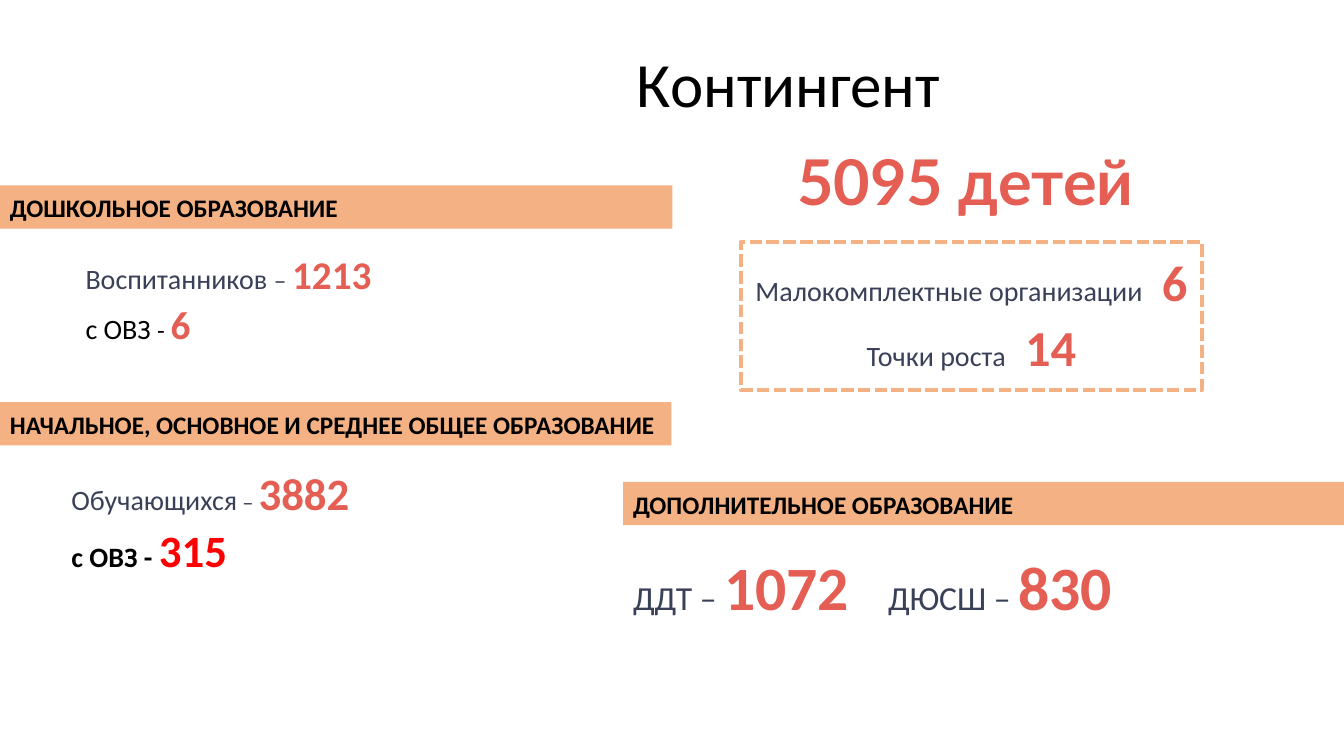
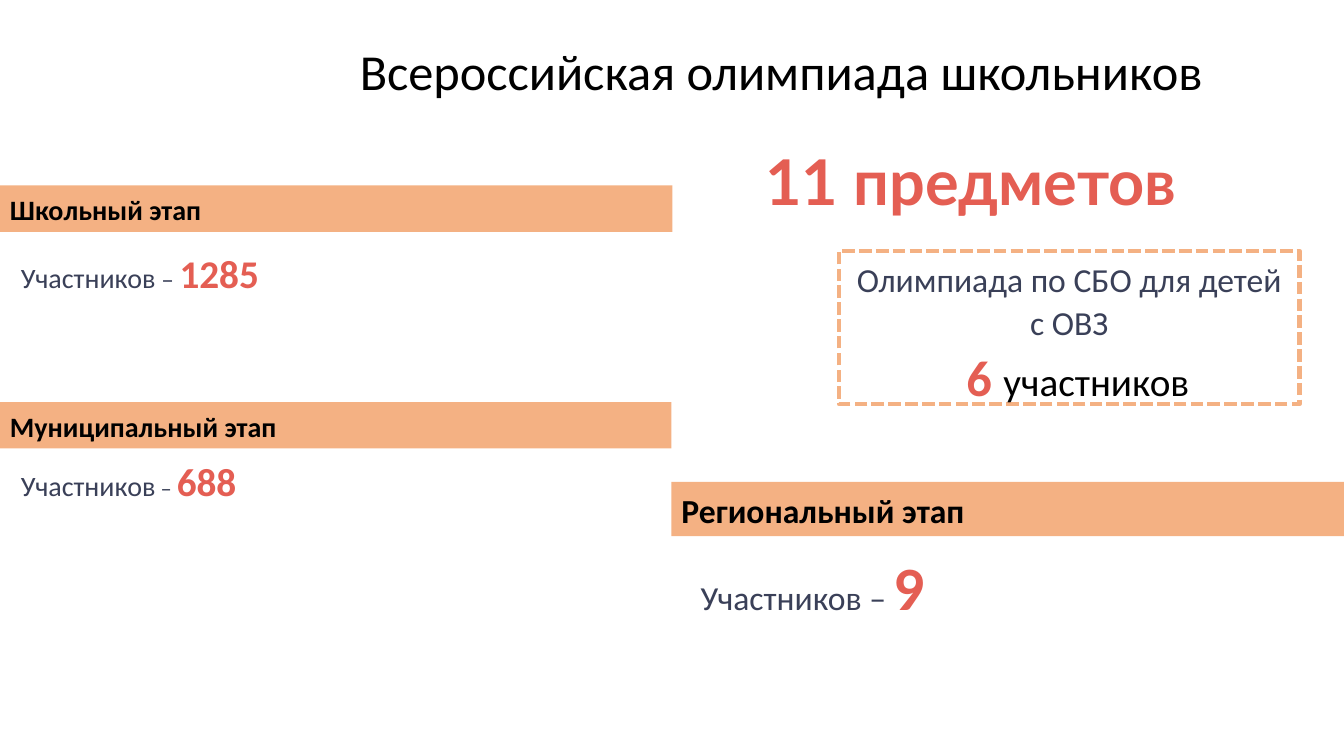
from pptx import Presentation
from pptx.dml.color import RGBColor
from pptx.enum import dml, shapes, text
from pptx.util import Inches, Pt

BAND = RGBColor(0xF4, 0xB1, 0x83)
ACCENT = RGBColor(0xE4, 0x5E, 0x53)
SLATE = RGBColor(0x3A, 0x40, 0x58)
BLACK = RGBColor(0, 0, 0)
RED = RGBColor(0xFF, 0, 0)

BODY_FONT = "Calibri"
HEADLINE_FONT = "Lato"
LINE_SPACING = 1.07
BAND_TOPS = (1.84, 3.99, 4.78)


def label(words, size=20, color=SLATE, bold=False, tracking=0):
    """Describe a run; tracking is extra letter spacing in points."""
    return words, size, color, bold, tracking


def value(words, size, color=ACCENT):
    return label(words, size, color, True)


def style(font, size, color, bold):
    font.size = Pt(size)
    font.color.rgb = color
    font.bold = bold


def write(shape, lines, align=text.PP_ALIGN.LEFT, font_name=BODY_FONT):
    """Fill a shape with lines, each a list of runs; return its paragraphs."""
    frame = shape.text_frame
    frame.word_wrap = True
    frame.vertical_anchor = text.MSO_ANCHOR.TOP
    for index, runs in enumerate(lines):
        paragraph = frame.add_paragraph() if index else frame.paragraphs[0]
        paragraph.alignment = align
        paragraph.line_spacing = LINE_SPACING
        paragraph.font.name = font_name
        for words, size, color, bold, tracking in runs:
            run = paragraph.add_run()
            run.text = words
            if len(runs) == 1:
                style(paragraph.font, size, color, bold)
            else:
                style(run.font, size, color, bold)
            if tracking:
                run._r.get_or_add_rPr().set("spc", str(tracking * 100))
    return frame.paragraphs


def add_text(slide, box, lines, **options):
    shape = slide.shapes.add_textbox(*map(Inches, box))
    return write(shape, lines, **options)


def add_rectangle(slide, box):
    shape = slide.shapes.add_shape(shapes.MSO_SHAPE.RECTANGLE, *map(Inches, box))
    shape.shadow.inherit = False
    return shape


def add_title(slide, box, words, size):
    add_text(slide, box, [[label(words, size, BLACK)]], align=text.PP_ALIGN.CENTER)


def add_headline(slide, box, words, align):
    add_text(slide, box, [[value(words, 45)]], align=align, font_name=HEADLINE_FONT)


def add_band(slide, left, top, width, heading, size=18):
    """Add a section band just tall enough for one line of its heading."""
    height = round(size * 1.22 * LINE_SPACING / 72 + 0.1, 2)
    band = add_rectangle(slide, (left, top, width, height))
    band.fill.solid()
    band.fill.fore_color.rgb = BAND
    band.line.fill.background()
    write(band, [[value(heading, size, BLACK)]])


def add_dashed_box(slide, box, lines):
    frame = add_rectangle(slide, box)
    frame.fill.background()
    frame.line.color.rgb = BAND
    frame.line.width = Pt(3)
    frame.line.dash_style = dml.MSO_LINE.SQUARE_DOT
    # The preset name for short dashes is written directly.
    frame.line._ln.prstDash.set("val", "sysDash")
    return write(frame, lines, align=text.PP_ALIGN.CENTER)


def build_enrolment(slide):
    first, second, third = BAND_TOPS
    add_band(slide, 0, first, 6.67, "ДОШКОЛЬНОЕ ОБРАЗОВАНИЕ")
    add_text(slide, (0.75, 2.4, 5.67, 1.43), [
        [label("Воспитанников "), label("– ", 18), value("1213", 28)],
        [label("с ОВЗ ", color=BLACK), label("- ", 18, BLACK), value("6", 28)],
    ])
    add_band(slide, 0, second, 6.66, "НАЧАЛЬНОЕ, ОСНОВНОЕ И СРЕДНЕЕ ОБЩЕЕ ОБРАЗОВАНИЕ")
    add_text(slide, (0.61, 4.53, 3.94, 2.25), [
        [label("Обучающихся"), label(" – ", 16), value("3882", 32)],
        [value("с ОВЗ - ", 20, BLACK), value("315", 32, RED)],
    ])
    add_band(slide, 6.18, third, 7.15, "ДОПОЛНИТЕЛЬНОЕ ОБРАЗОВАНИЕ")
    for left, width, name, count in ((6.18, 2.35, "ДДТ", "1072"),
                                     (8.71, 2.5, "ДЮСШ", "830")):
        add_text(slide, (left, 5.35, width, 0.89),
                 [[label(f"{name} – ", 24), value(count, 44)]])
    add_headline(slide, (6.88, 1.31, 5.54, 0.94), "5095 детей ", text.PP_ALIGN.CENTER)
    add_dashed_box(slide, (7.35, 2.4, 4.57, 1.47), [
        [label(name), label(" ", tracking=9), value(count, 36)]
        for name, count in (("Малокомплектные организации", "6"), ("Точки роста", "14"))
    ])
    add_title(slide, (4.32, 0.34, 7.14, 0.94), "Контингент ", 45)


def build_olympiad(slide):
    first, second, third = BAND_TOPS
    add_band(slide, 0, first, 6.67, "Школьный этап", 20)
    add_text(slide, (0.11, 2.39, 6.55, 1.25),
             [[label("Участников"), label(" – ", 18), value("1285", 28)]])
    add_band(slide, 0, second, 6.66, "Муниципальный этап", 20)
    add_text(slide, (0.11, 4.45, 3.94, 2.25),
             [[label("Участников"), label(" – ", 16), value("688", 28)]])
    add_band(slide, 6.66, third, 6.67, "Региональный этап", 24)
    add_text(slide, (6.85, 5.35, 2.44, 0.89),
             [[label("Участников – ", 24), value("9", 44)]])
    add_headline(slide, (7.49, 1.31, 4.92, 0.94), "11 предметов", text.PP_ALIGN.LEFT)
    paragraphs = add_dashed_box(slide, (8.32, 2.49, 4.57, 1.52), [
        [label("Олимпиада по СБО для детей с ОВЗ", 24)],
        [value("6 ", 36), label("участников", 28, BLACK)],
    ])
    paragraphs[1]._p.get_or_add_pPr().set("marL", str(Inches(0.17)))
    add_title(slide, (2.61, 0.31, 10.28, 0.94), "Всероссийская олимпиада школьников", 36)


def main():
    presentation = Presentation()
    presentation.slide_width = Inches(13.33)
    presentation.slide_height = Inches(7.5)
    for build in (build_enrolment, build_olympiad):
        build(presentation.slides.add_slide(presentation.slide_layouts[6]))
    presentation.save("out.pptx")


if __name__ == "__main__":
    main()
